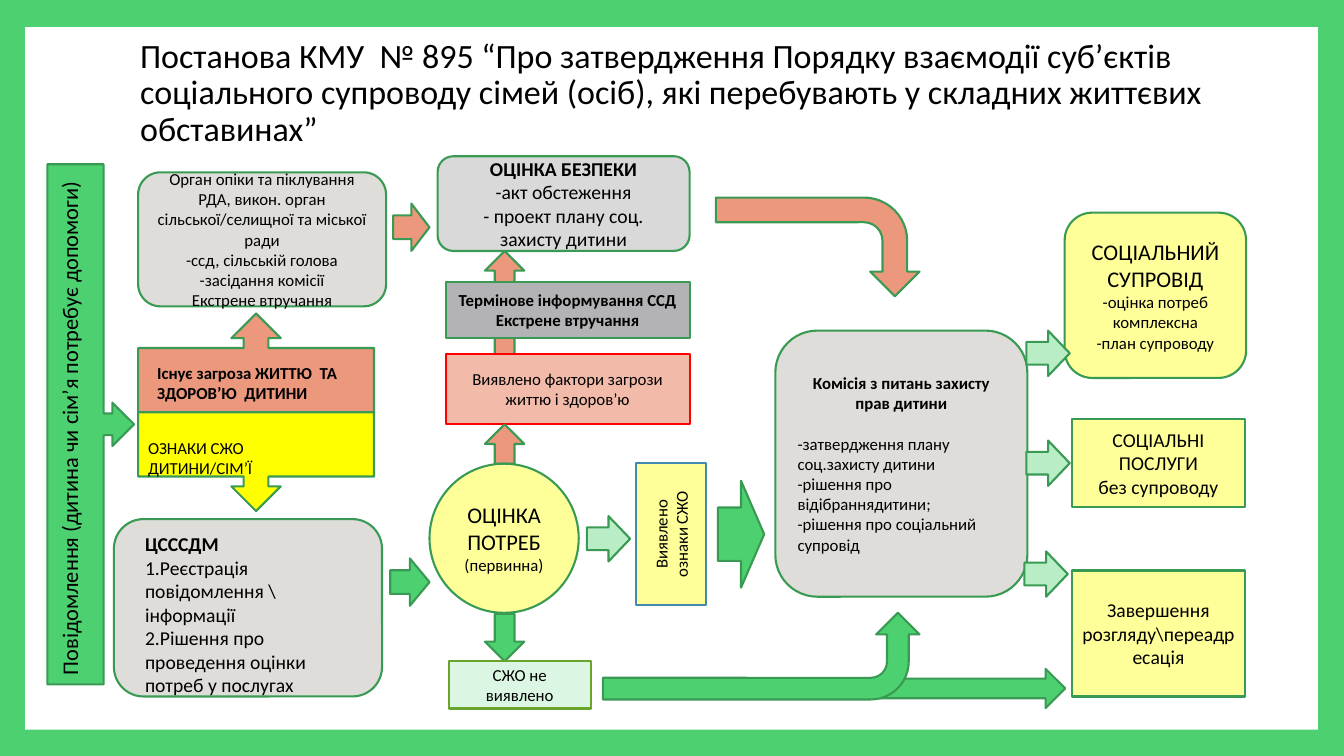
from pptx import Presentation
from pptx.dml.color import RGBColor
from pptx.enum.shapes import MSO_SHAPE
from pptx.enum.text import MSO_ANCHOR, MSO_AUTO_SIZE, PP_ALIGN
from pptx.oxml.ns import qn
from pptx.util import Inches, Pt

RECT = MSO_SHAPE.RECTANGLE
ROUND = MSO_SHAPE.ROUNDED_RECTANGLE
OVAL = MSO_SHAPE.OVAL
UP = MSO_SHAPE.UP_ARROW
RIGHT = MSO_SHAPE.RIGHT_ARROW
BENT = MSO_SHAPE.BENT_ARROW
RIGHT_CALLOUT = MSO_SHAPE.RIGHT_ARROW_CALLOUT
UP_CALLOUT = MSO_SHAPE.UP_ARROW_CALLOUT
DOWN_CALLOUT = MSO_SHAPE.DOWN_ARROW_CALLOUT
LEFT, CENTER = PP_ALIGN.LEFT, PP_ALIGN.CENTER
TOP, MIDDLE = MSO_ANCHOR.TOP, MSO_ANCHOR.MIDDLE
NO_FIT = MSO_AUTO_SIZE.NONE

COLORS = {
    "green": "4DD170", "edge": "399B53", "pale_green": "B8EDC6", "mint": "DBF6E2",
    "lime": "6BA42C", "salmon": "EC987D", "pink": "F2BAA9", "red": "FF0000",
    "sand": "DFDDD9", "silver": "D9D9D9", "gray": "B3B3B5", "yellow": "FFFF00",
    "cream": "FFFF99", "blue": "418AB3", "white": "FFFFFF", "black": "000000",
}


def color(name):
    return RGBColor.from_string(COLORS[name])


def write_text(frame, lines, size=12, bold=False, align=CENTER, anchor=MIDDLE, spacing=None):
    """Each line is a string, or a (string, overrides) pair with its own size, bold, align or before."""
    frame.word_wrap = True
    frame.auto_size = NO_FIT
    frame.vertical_anchor = anchor
    for index, line in enumerate(lines):
        text, own = (line, {}) if isinstance(line, str) else line
        para = frame.paragraphs[0] if index == 0 else frame.add_paragraph()
        para.alignment = own.get("align", align)
        para.space_before = Pt(own.get("before", 0))
        if spacing:
            para.line_spacing = spacing
        span = para.add_run()
        span.text = text
        span.font.name = "Calibri"
        span.font.size = Pt(own.get("size", size))
        span.font.bold = own.get("bold", bold)
        span.font.color.rgb = color("black")


class FlowPage:
    def __init__(self, deck):
        self.page = deck.slides.add_slide(deck.slide_layouts[5])
        self.page.background.fill.solid()
        self.page.background.fill.fore_color.rgb = color("green")

    def panel(self, at):
        """White sheet placed behind everything else."""
        sheet = self.shape(RECT, at, "white", edge=None)
        self.page.shapes.element.insert(2, sheet.element)

    def title(self, text, at):
        box = self.page.shapes.title
        box.left, box.top, box.width, box.height = map(Inches, at)
        write_text(box.text_frame, [text], size=24.3, align=LEFT, spacing=0.9)
        box.text_frame.margin_bottom = Inches(0.65)

    def shape(self, kind, at, fill, edge="edge", turn=0, flip=False, lines=(), **style):
        box = self.page.shapes.add_shape(kind, *map(Inches, at))
        box.shadow.inherit = False
        box.fill.solid()
        box.fill.fore_color.rgb = color(fill)
        if edge:
            box.line.color.rgb = color(edge)
            box.line.width = Pt(1.5)
        else:
            box.line.fill.background()
        box.rotation = turn
        if flip:
            box.element.spPr.find(qn("a:xfrm")).set("flipV", "1")
        if lines:
            write_text(box.text_frame, lines, **style)
        return box

    def label(self, at, lines, turn=0, **style):
        box = self.page.shapes.add_textbox(*map(Inches, at))
        box.rotation = turn
        write_text(box.text_frame, lines, align=LEFT, anchor=TOP, **style)


def draw_notice(flow):
    flow.shape(RIGHT_CALLOUT, (0.47, 1.63, 0.86, 5.16), "green")
    flow.label((-1.89, 4.03, 5.16, 0.37), ["Повідомлення (дитина чи сім’я потребує допомоги)"],
               turn=270, size=16)
    flow.shape(UP_CALLOUT, (1.37, 3.11, 2.34, 0.98), "salmon")
    flow.shape(DOWN_CALLOUT, (1.37, 4.09, 2.34, 0.98), "yellow")
    flow.label((1.46, 3.55, 2.34, 0.5), ["Існує загроза ЖИТТЮ  ТА ЗДОРОВ’Ю  ДИТИНИ"], bold=True)
    flow.label((1.37, 4.29, 2.05, 0.25), ["ОЗНАКИ СЖО ДИТИНИ/СІМ’Ї"])


def draw_safety_route(flow):
    flow.shape(UP, (4.81, 2.49, 0.39, 1.09), "salmon")
    flow.shape(RECT, (4.42, 2.8, 2.42, 0.55), "gray", bold=True,
               lines=["Термінове інформування ССД", "Екстрене втручання"])
    flow.shape(RECT, (4.42, 3.51, 2.42, 0.7), "pink", edge="red",
               lines=["Виявлено фактори загрози життю і здоров’ю"])
    flow.shape(UP, (4.81, 4.21, 0.39, 0.39), "salmon")
    flow.shape(ROUND, (1.37, 1.71, 2.46, 1.33), "sand", lines=[
        "Орган опіки та піклування РДА, викон. орган сільської/селищної та міської ради",
        "-ссд, сільській голова", "-засідання комісії", "Екстрене втручання"])
    flow.shape(RIGHT, (3.9, 2.02, 0.36, 0.47), "salmon")
    flow.shape(ROUND, (4.34, 1.55, 2.5, 0.94), "silver", size=14, lines=[
        ("ОЦІНКА БЕЗПЕКИ", {"bold": True}), "-акт обстеження",
        "- проект плану соц. захисту дитини"])
    flow.shape(BENT, (7.62, 1.44, 0.98, 2.02), "salmon", turn=90)


def draw_needs_route(flow):
    flow.shape(ROUND, (1.13, 5.15, 2.66, 1.76), "sand")
    flow.label((1.34, 5.23, 2.38, 1.75), [
        ("ЦСССДМ", {"bold": True}), "1.Реєстрація повідомлення \\ інформації",
        "2.Рішення про проведення оцінки потреб у послугах"], size=14)
    flow.shape(RIGHT, (3.87, 5.54, 0.39, 0.47), "green")
    flow.shape(OVAL, (4.26, 4.6, 1.48, 1.48), "cream", size=16,
               lines=["ОЦІНКА ПОТРЕБ", ("(первинна)", {"size": 12})])
    flow.shape(RECT, (5.95, 4.95, 1.41, 0.7), "cream", edge="blue", turn=270,
               lines=["Виявлено ознаки СЖО"])
    flow.shape(RIGHT, (7.12, 4.77, 0.46, 1.06), "green")
    flow.shape(UP, (4.81, 6.09, 0.39, 0.47), "green", turn=180)
    flow.shape(RECT, (4.45, 6.56, 1.41, 0.47), "mint", edge="lime", lines=["СЖО не виявлено"])
    flow.shape(UP, (9.26, 5.72, 0.39, 2.22), "green", turn=90)
    flow.shape(BENT, (7.12, 4.94, 0.86, 3.14), "green", turn=270, flip=True)


def draw_decisions(flow):
    flow.shape(ROUND, (7.69, 3.28, 2.5, 2.64), "sand", align=LEFT, lines=[
        ("Комісія з питань захисту прав дитини", {"bold": True, "align": CENTER}),
        ("-затвердження плану соц.захисту дитини", {"before": 14.6}),
        "-рішення про відібраннядитини;", "-рішення про соціальний супровід"])
    flow.shape(ROUND, (10.56, 2.11, 1.8, 1.64), "cream", lines=[
        ("СОЦІАЛЬНИЙ СУПРОВІД", {"size": 16}), "-оцінка потреб комплексна",
        "-план супроводу"])
    flow.shape(RECT, (10.63, 4.16, 1.72, 0.87), "cream", size=14,
               lines=["СОЦІАЛЬНІ", "ПОСЛУГИ", "без супроводу"])
    flow.shape(RECT, (10.63, 5.66, 1.72, 1.25), "cream", size=14,
               lines=["Завершення розгляду\\переадресація"])
    for left, top in ((5.81, 5.13), (10.17, 3.29), (10.17, 4.38), (10.15, 5.48)):
        flow.shape(UP, (left, top, 0.45, 0.43), "pale_green", turn=90)


def main():
    deck = Presentation()
    deck.slide_width, deck.slide_height = Inches(13.33), Inches(7.5)
    flow = FlowPage(deck)
    flow.panel((0.25, 0.27, 12.82, 6.97))
    flow.title("Постанова КМУ  № 895 “Про затвердження Порядку взаємодії суб’єктів соціального "
               "супроводу сімей (осіб), які перебувають у складних життєвих обставинах”",
               (1.29, 0.49, 10.8, 1.48))
    draw_notice(flow)
    draw_safety_route(flow)
    draw_needs_route(flow)
    draw_decisions(flow)
    deck.save("out.pptx")


if __name__ == "__main__":
    main()
